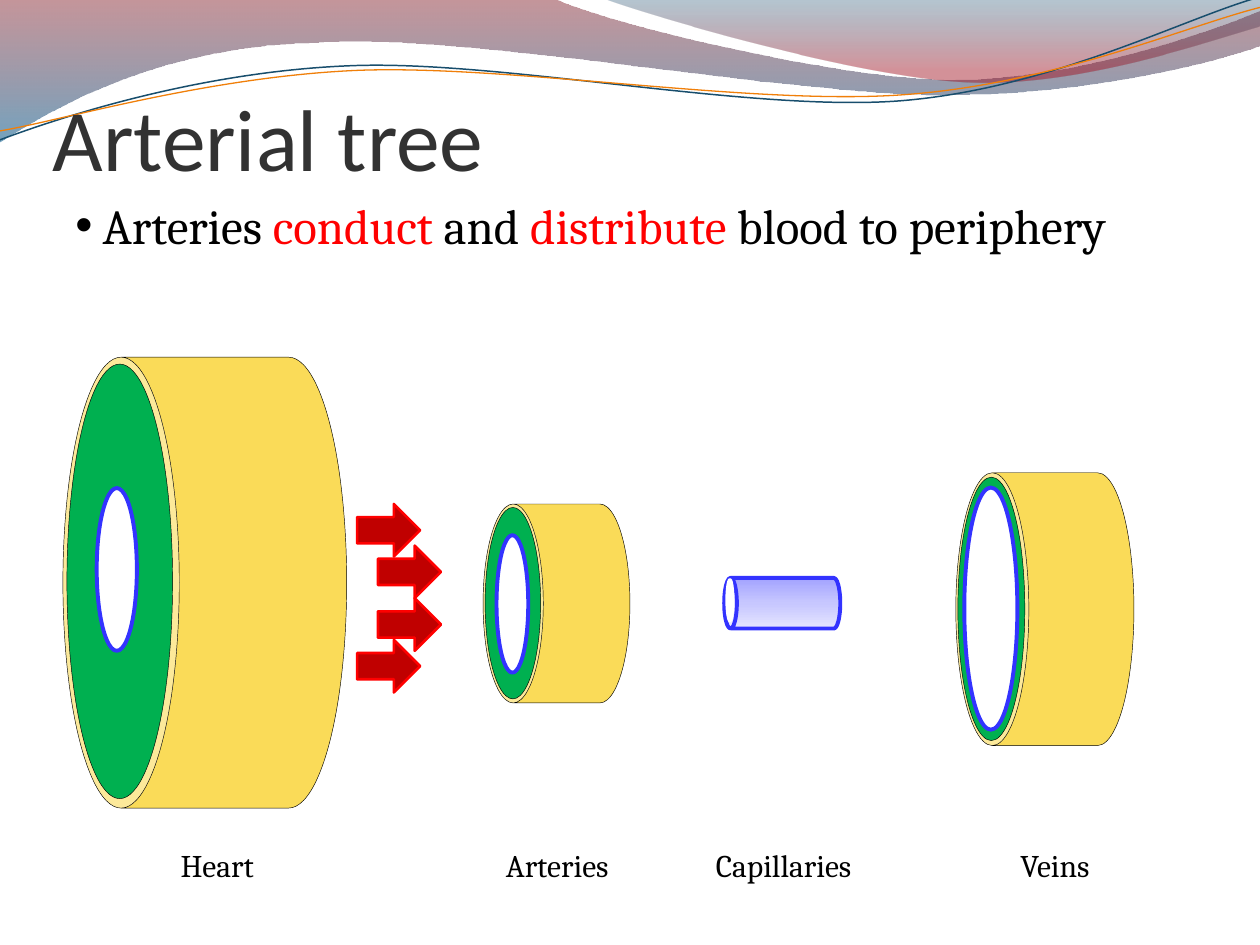
from lxml.etree import SubElement as Sub
from pptx import Presentation
from pptx.dml.color import RGBColor
from pptx.enum.shapes import MSO_SHAPE as Kind
from pptx.enum.text import MSO_ANCHOR as Anchor, MSO_AUTO_SIZE as Fit, PP_ALIGN as Align
from pptx.oxml.ns import qn
from pptx.util import Cm, Pt


def tint(color, code):
    """Set a colour format from a hex string."""
    color.rgb = RGBColor.from_string(code)


def paint(shape, fill=None, line=None, width=1):
    """Give a shape a flat fill and outline, or none, and no shadow."""
    shape.shadow.inherit = False
    if fill:
        shape.fill.solid()
        tint(shape.fill.fore_color, fill)
    else:
        shape.fill.background()
    if line:
        tint(shape.line.color, line)
        shape.line.width = Pt(width)
    else:
        shape.line.fill.background()


def blend(shape, stops, angle):
    """Fill a shape with a gradient of (place, colour, opacity) stops."""
    shape.fill.gradient()
    grad = shape._element.spPr.find(qn("a:gradFill"))
    for part in list(grad):
        grad.remove(part)
    row = Sub(grad, qn("a:gsLst"))
    for place, code, alpha in stops:
        stop = Sub(row, qn("a:gs"), pos=str(place * 1000))
        color = Sub(stop, qn("a:srgbClr"), val=code)
        if alpha < 100:
            Sub(color, qn("a:alpha"), val=str(alpha * 1000))
    Sub(grad, qn("a:lin"), ang=str(angle * 60000), scaled="0")


def wave(slide, start, steps, close):
    """Draw an outline of line ends (two numbers) and cubic curves (six)."""
    points = [(Cm(x), Cm(y)) for step in steps for x, y in zip(step[::2], step[1::2])]
    build = slide.shapes.build_freeform(*map(Cm, start))
    build.add_line_segments(points, close=close)
    shape = build.convert_to_shape()
    parts = shape._element.iter(qn("a:lnTo"))
    legs = iter(list(parts))
    for step in steps:
        leg = next(legs)
        if len(step) == 6:
            leg.tag = qn("a:cubicBezTo")
            for spare in (next(legs), next(legs)):
                leg.append(spare[0])
                spare.getparent().remove(spare)
    return shape


def banner(slide):
    """Draw the two shaded waves and two thin lines along the top."""
    bands = [
        ((0, 0), [(11.18, -0.02), (12.09, 0.43, 16.87, 1.6, 19.25, 1.6),
                  (21.67, 1.6, 24.33, 0.66, 25.4, 0.23), (25.43, 0.91),
                  (24.97, 1.12, 22.1, 1.93, 18.95, 1.91),
                  (15.8, 1.91, 9.7, 0.71, 6.53, 0.86),
                  (3.28, 0.91, 1.17, 2.11, -0.03, 2.87)],
         [(0, "7E1621", 45), (100, "005689", 55)]),
        ((12.17, -0.02), [(12.93, 0.28, 17.32, 1.57, 19.53, 1.65),
                          (21.74, 1.75, 24.41, 0.81, 25.4, 0.53), (25.4, 0)],
         [(0, "094467", 30), (80, "A10F1F", 45)]),
    ]
    for start, steps, stops in bands:
        band = wave(slide, start, steps, True)
        paint(band)
        blend(band, stops, 90)
    lines = [
        ((-0.05, 2.22), [(1.19, 1.82, 4.02, 1.04, 7.05, 1.06),
                         (10.05, 1.07, 15.02, 2.37, 18.08, 2.29),
                         (21.13, 2.2, 23.87, 0.91, 25.41, 0.55)], "184E6D", 0.85),
        ((-0.04, 2.04), [(1.16, 1.9, 4.18, 1.15, 7.2, 1.16),
                         (10.25, 1.18, 15.13, 2.25, 18.18, 2.17),
                         (21.21, 2.1, 23.93, 1.06, 25.45, 0.75)], "F07F09", 0.75),
    ]
    for start, steps, code, width in lines:
        line = wave(slide, start, steps, False)
        line.rotation = 357.3
        paint(line, line=code, width=width)


def tube(slide, box, bend):
    """Add a can lying on its side that fills the box."""
    x, y, w, h = box
    can = slide.shapes.add_shape(
        Kind.CAN, Cm(x + (w - h) / 2), Cm(y + (h - w) / 2), Cm(h), Cm(w))
    can.rotation = 270
    can.adjustments[0] = bend
    return can


def ring(slide, box, inner, fill, line, width):
    """Add an ellipse placed relative to the box."""
    x, y, w, h = inner
    oval = slide.shapes.add_shape(
        Kind.OVAL, Cm(box[0] + x), Cm(box[1] + y), Cm(w), Cm(h))
    paint(oval, fill, line, width)


def vessel(slide, box, wall, lumen):
    """Draw a thick vessel with its muscle wall and lumen."""
    paint(tube(slide, box, 0.41), "FADB58", "000000", 0.25)
    ring(slide, box, wall, "00B050", "000000", 0.25)
    ring(slide, box, lumen, "FFFFFF", "3333FF", 2.25)


def thin(slide, box):
    """Draw the capillary with its open end."""
    can = tube(slide, box, 0.25)
    paint(can, line="3333FF", width=2.25)
    blend(can, [(0, "A3A3FF", 100), (50, "C7C7FF", 100), (100, "E4E4FF", 100)], 180)
    ring(slide, box, (0.05, 0.03, 0.13, 0.84), "FFFFFF", "FFFFFF", 1.5)


def flow(slide, box):
    """Draw the four arrows of blood flow inside the box."""
    for x, y in [(0, 0), (0.42, 0.84), (0.42, 1.9), (0, 2.74)]:
        arrow = slide.shapes.add_shape(
            Kind.RIGHT_ARROW, Cm(box[0] + x), Cm(box[1] + y), Cm(1.27), Cm(1.06))
        paint(arrow, "C00000", "FF0000", 1.5)


def style(para, size, face="Cambria"):
    """Set the font of a paragraph."""
    para.font.size = Pt(size)
    para.font.name = face


def write(slide, box, runs):
    """Add a text box with one paragraph of (text, colour) runs."""
    frame = slide.shapes.add_textbox(*map(Cm, box)).text_frame
    frame.word_wrap = True
    frame.auto_size = Fit.SHAPE_TO_FIT_TEXT
    para = frame.paragraphs[0]
    for text, code in runs:
        run = para.add_run()
        run.text = text
        tint(run.font.color, code)
    return para


def label(slide, box, name):
    """Write the name of a part under its drawing."""
    style(write(slide, box, [(name, "000000")]), 18)


def lead(slide, box):
    """Write the bulleted statement."""
    black, red = "000000", "FF0000"
    para = write(slide, box, [
        ("Arteries ", black), ("conduct", red), (" and ", black),
        ("distribute", red), (" blood to periphery", black)])
    props = para._p.get_or_add_pPr()
    props.set("marL", str(Cm(0.55)))
    props.set("indent", str(-Cm(0.55)))
    Sub(props, qn("a:buFont"), typeface="Arial")
    Sub(props, qn("a:buChar"), char="•")
    style(para, 28)


def head(slide, box):
    """Place and format the title above the banner."""
    title = slide.shapes.title
    title.left, title.top, title.width, title.height = map(Cm, box)
    frame = title.text_frame
    frame.text = "Arterial tree"
    frame.auto_size = Fit.NONE
    frame.vertical_anchor = Anchor.BOTTOM
    frame.margin_left = frame.margin_right = frame.margin_bottom = 0
    frame.margin_top = Cm(0.13)
    para = frame.paragraphs[0]
    para.alignment = Align.LEFT
    style(para, 50, "Calibri")
    tint(para.font.color, "323232")
    slide.shapes._spTree.append(title._element)


def main():
    """Build the slide and save it."""
    deck = Presentation()
    deck.slide_width, deck.slide_height = Cm(25.4), Cm(19.05)
    slide = deck.slides.add_slide(deck.slide_layouts[5])
    banner(slide)
    vessel(slide, (1.27, 7.2, 5.72, 9.09), (0.08, 0.14, 2.13, 8.76), (0.68, 2.64, 0.81, 3.28))
    vessel(slide, (9.74, 10.16, 2.96, 4.01), (0.04, 0.07, 1.12, 3.86), (0.27, 0.63, 0.64, 2.77))
    thin(slide, (14.6, 11.65, 2.34, 1.02))
    vessel(slide, (19.27, 9.53, 3.59, 5.5), (0.04, 0.09, 1.35, 5.31), (0.17, 0.3, 1.07, 4.88))
    names = [("Heart", 3.39), ("Arteries", 9.95), ("Capillaries", 14.18), ("Veins", 20.32)]
    for name, x in names:
        label(slide, (x, 16.93, 4.88, 1.06), name)
    flow(slide, (7.2, 10.16))
    head(slide, (1.06, 0.64, 22.86, 3.17))
    lead(slide, (1.27, 3.81, 22.68, 1.45))
    deck.save("out.pptx")


if __name__ == "__main__":
    main()
